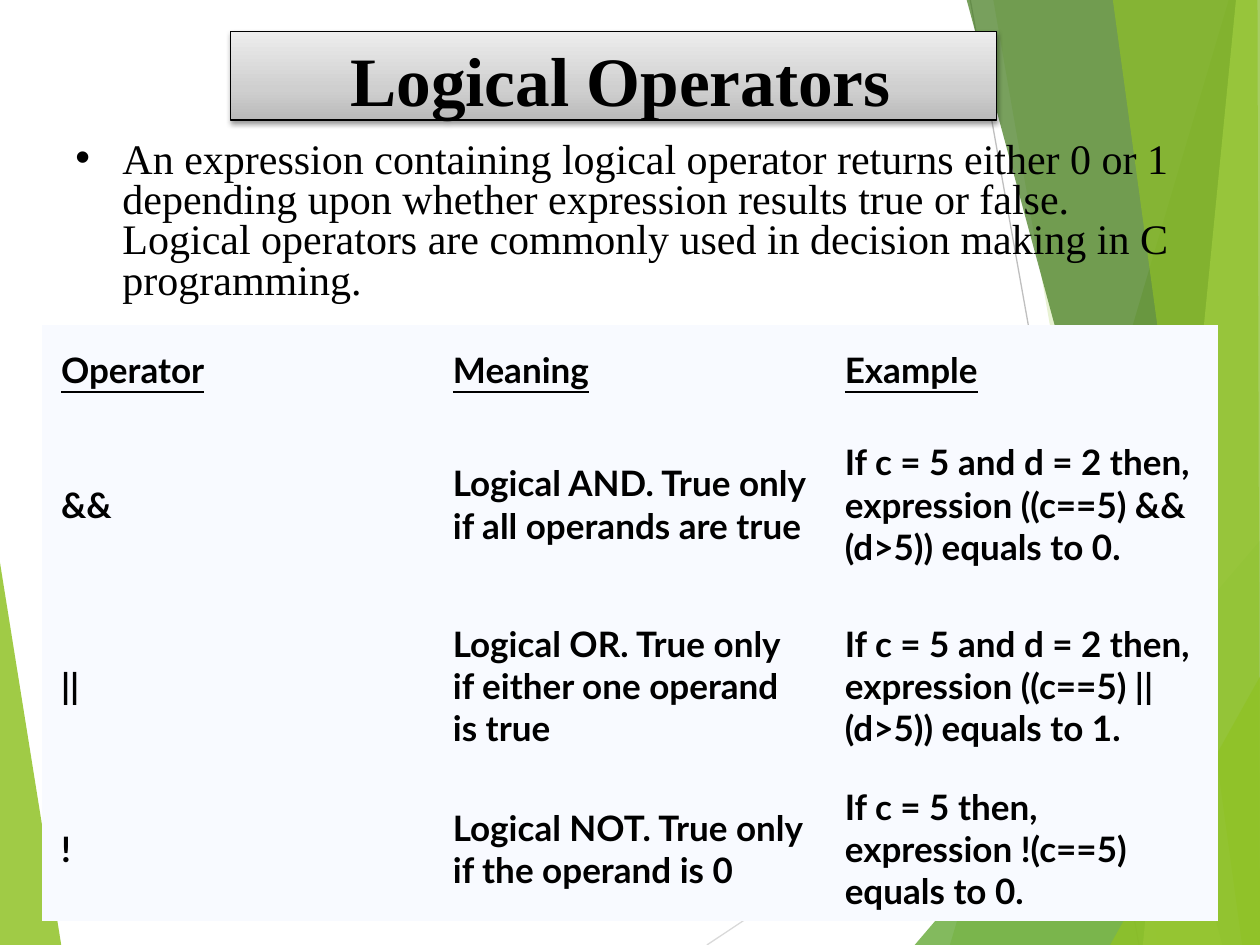
from lxml.etree import SubElement
from pptx import Presentation
from pptx.dml.color import RGBColor
from pptx.enum.shapes import MSO_CONNECTOR as Connector
from pptx.enum.text import MSO_ANCHOR as Anchor, MSO_AUTO_SIZE as AutoSize, PP_ALIGN as Align
from pptx.oxml import parse_xml
from pptx.oxml.ns import nsdecls, qn
from pptx.util import Cm, Pt


def color(hex_string):
    return RGBColor.from_string(hex_string)


def format_runs(paragraph, name, size, bold=False, underline=False):
    for run in paragraph.runs:
        run.font.name = name
        run.font.size = Pt(size)
        run.font.bold = bold
        run.font.underline = underline
        run.font.color.rgb = color("000000")


presentation = Presentation()
presentation.slide_width, presentation.slide_height = Cm(25.4), Cm(19.05)
slide = presentation.slides.add_slide(presentation.slide_layouts[5])

# Thin background lines
for x1, y1, x2, y2, line_color in [
    (14.25, 19.05, 25.43, 11.61, "D9D9D9"),
    (19.56, 0, 22.96, 19.05, "BFBFBF"),
]:
    line = slide.shapes.add_connector(Connector.STRAIGHT, Cm(x1), Cm(y1), Cm(x2), Cm(y2))
    line.line.color.rgb = color(line_color)
    line.line.width = Pt(0.75)
    SubElement(line._element.spPr, qn("a:effectLst"))

# Translucent green facets: fill, opacity in percent, corners in cm
facets = [
    ("90C226", 85, [(-0.03, 11.15), (1.24, 19.08), (-0.03, 19.05)]),
    ("90C226", 30, [(24.77, 0), (19.15, 19.05), (25.45, 19.08), (25.43, 0)]),
    ("90C226", 20, [(20.02, -0.03), (23.34, 19.05), (25.43, 19.05), (25.43, -0.03)]),
    ("54A021", 72, [(18.44, 19.05), (25.4, 10.9), (25.43, 19.05)]),
    ("3F7819", 70, [(19.48, -0.03), (24.64, 19.05), (25.43, 19.05), (25.43, -0.03)]),
    ("C0E474", 70, [(24.92, -0.03), (23.04, 19.05), (25.43, 19.05), (25.4, -0.03)]),
    ("90C226", 65, [(22.43, -0.03), (25.04, 19.05), (25.4, 19.05), (25.35, -0.03)]),
    ("90C226", 80, [(22.38, 19.05), (25.43, 13.59), (25.43, 19.05)]),
]
for fill_color, opacity, corners in facets:
    points = [(Cm(x), Cm(y)) for x, y in corners]
    builder = slide.shapes.build_freeform(*points[0])
    builder.add_line_segments(points[1:], close=True)
    facet = builder.convert_to_shape()
    facet.shadow.inherit = False
    facet.fill.solid()
    facet.fill.fore_color.rgb = color(fill_color)
    facet.line.fill.background()
    fill_element = facet._element.spPr.find(qn("a:solidFill"))
    SubElement(fill_element[0], qn("a:alpha"), val=str(opacity * 1000))

# Title banner, in front of the facets
title = slide.shapes.title
slide.shapes._spTree.append(title._element)
title.left, title.top, title.width, title.height = Cm(4.65), Cm(0.64), Cm(15.44), Cm(1.78)
title.text_frame.text = "Logical Operators"
title.text_frame.auto_size = AutoSize.NONE
title.text_frame.vertical_anchor = Anchor.MIDDLE
title.text_frame.margin_left = Cm(0.54)
title.text_frame.margin_top = Cm(0.2)
title.text_frame.margin_bottom = Cm(0.1)
title.text_frame.paragraphs[0].alignment = Align.CENTER
format_runs(title.text_frame.paragraphs[0], "Times New Roman", 39.6, bold=True)
stops = "".join(
    f'<a:gs pos="{position * 1000}"><a:srgbClr val="{stop}"/></a:gs>'
    for position, stop in [(0, "BABABA"), (35, "CFCFCF"), (100, "EDEDED")]
)
title._element.spPr.append(parse_xml(
    f'<a:gradFill {nsdecls("a")} rotWithShape="1"><a:gsLst>{stops}</a:gsLst>'
    '<a:lin ang="16200000" scaled="1"/></a:gradFill>'
))
title.line.color.rgb = color("000000")
title.line.width = Pt(0.75)
title._element.spPr.append(parse_xml(
    f'<a:effectLst {nsdecls("a")}><a:outerShdw blurRad="{Pt(3.1)}" dist="{Pt(1.6)}" '
    'dir="5400000" rotWithShape="0"><a:srgbClr val="000000"><a:alpha val="38000"/>'
    '</a:srgbClr></a:outerShdw></a:effectLst>'
))

# Introductory bullet
intro = slide.shapes.add_textbox(Cm(1.27), Cm(2.74), Cm(22.86), Cm(4.24))
intro.text_frame.word_wrap = True
intro.text_frame.text = (
    "An expression containing logical operator returns either 0 or 1 depending upon "
    "whether expression results true or false. Logical operators are commonly used in "
    "decision making in C programming."
)
paragraph = intro.text_frame.paragraphs[0]
paragraph.line_spacing = 0.8
format_runs(paragraph, "Times New Roman", 24)
properties = paragraph._p.get_or_add_pPr()
properties.set("marL", str(Cm(0.95)))
properties.set("indent", str(Cm(-0.95)))
SubElement(properties, qn("a:buFont"), typeface="Arial")
SubElement(properties, qn("a:buChar"), char="•")

# Operator table
rows = [
    ("Operator", "Meaning", "Example"),
    ("&&", "Logical AND. True only if all operands are true",
     "If c = 5 and d = 2 then, expression ((c==5) && (d>5)) equals to 0."),
    ("||", "Logical OR. True only if either one operand is true",
     "If c = 5 and d = 2 then, expression ((c==5) || (d>5)) equals to 1."),
    ("!", "Logical NOT. True only if the operand is 0",
     "If c = 5 then, expression !(c==5) equals to 0."),
]
row_heights = [1.78, 3.66, 3.66, 2.77]
frame = slide.shapes.add_table(4, 3, Cm(0.85), Cm(6.56), Cm(23.7), Cm(sum(row_heights)))
table = frame.table
no_style_no_grid = "{2D5ABB26-0587-4C30-8999-92F81FD0307C}"
table._tbl.tblPr.find(qn("a:tableStyleId")).text = no_style_no_grid
for row_index, (texts, height) in enumerate(zip(rows, row_heights)):
    table.rows[row_index].height = Cm(height)
    for column_index, text in enumerate(texts):
        cell = table.cell(row_index, column_index)
        cell.text_frame.text = text
        cell.vertical_anchor = Anchor.MIDDLE
        cell.margin_left = cell.margin_right = Cm(0.38)
        cell.margin_top = cell.margin_bottom = Cm(0.18)
        cell.fill.solid()
        cell.fill.fore_color.rgb = color("F8FAFF")
        format_runs(cell.text_frame.paragraphs[0], "Lato", 20, bold=True, underline=row_index == 0)

presentation.save("out.pptx")
